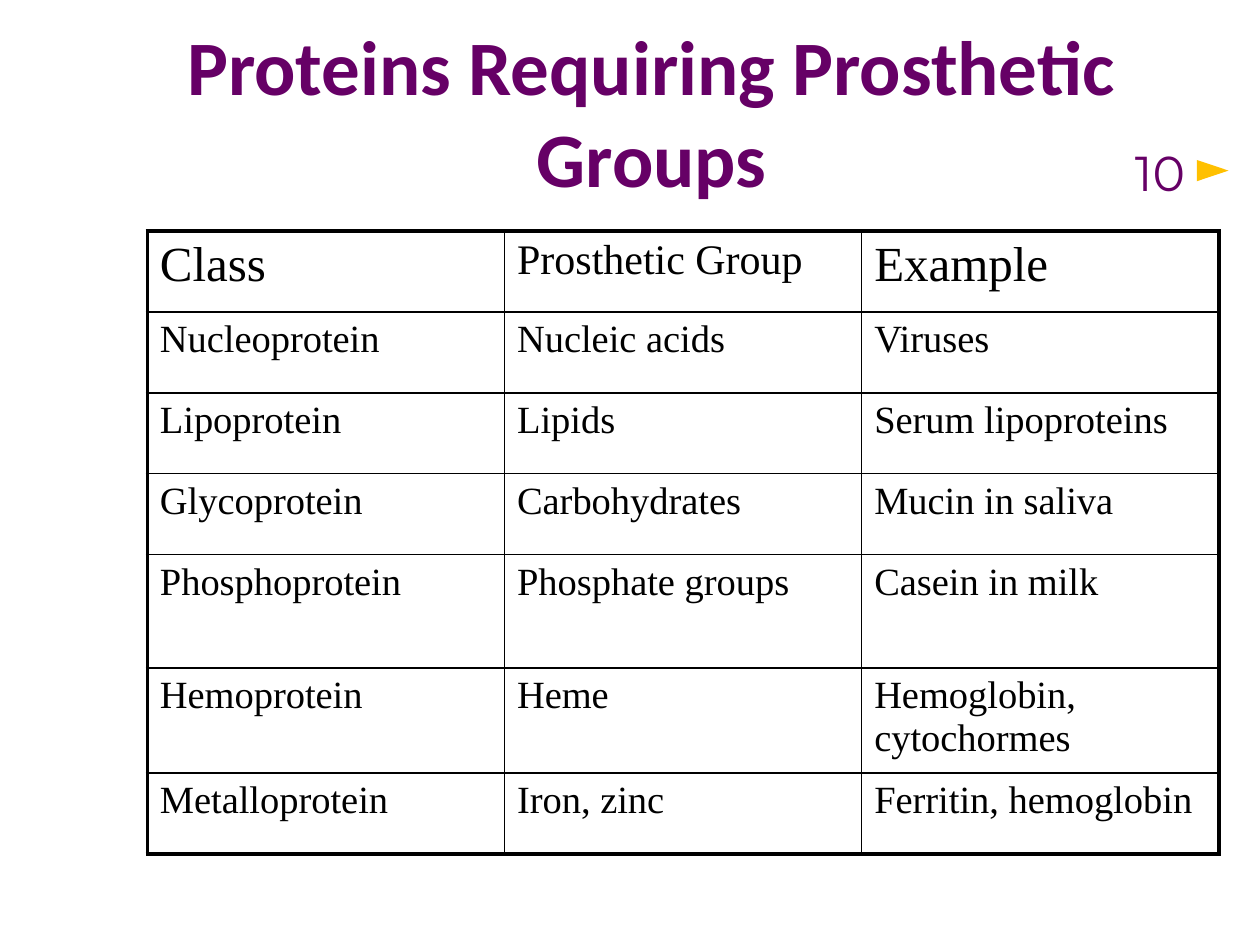
import dataclasses

import pptx
import pptx.dml.color
import pptx.enum.shapes
import pptx.enum.text
import pptx.oxml
import pptx.oxml.ns
import pptx.util

Cm = pptx.util.Cm
Pt = pptx.util.Pt
Rgb = pptx.dml.color.RGBColor.from_string
Align = pptx.enum.text.PP_ALIGN
Anchor = pptx.enum.text.MSO_ANCHOR


@dataclasses.dataclass(frozen=True)
class Theme:
    plum: str = "660066"
    gold: str = "FFC000"
    ink: str = "000000"
    title: int = 44
    head: int = 28
    group: int = 24
    body: int = 22
    thick: float = 2.25
    thin: float = 1


THEME = Theme()

ROWS = [
    ("Class", "Prosthetic Group", "Example"),
    ("Nucleoprotein", "Nucleic acids", "Viruses"),
    ("Lipoprotein", "Lipids", "Serum lipoproteins"),
    ("Glycoprotein", "Carbohydrates", "Mucin in saliva"),
    ("Phosphoprotein", "Phosphate groups", "Casein in milk"),
    ("Hemoprotein", "Heme", "Hemoglobin, cytochormes"),
    ("Metalloprotein", "Iron, zinc", "Ferritin, hemoglobin"),
]
HEIGHTS = [1.63, 1.63, 1.63, 1.63, 2.29, 2.11, 1.63]
WIDTH = 7.2


def write(frame, text, color, align, **form):
    para = frame.paragraphs[0]
    para.alignment = align
    run = para.add_run()
    run.text = text
    run.font.color.rgb = Rgb(color)
    for name, value in form.items():
        setattr(run.font, name, value)


def add_text(slide, box, text, **form):
    frame = slide.shapes.add_textbox(*map(Cm, box)).text_frame
    frame.word_wrap = True
    frame.vertical_anchor = Anchor.MIDDLE
    write(frame, text, THEME.plum, Align.CENTER, **form)


def add_edges(cell, edges):
    """Draw cell borders from (side, points) pairs given in schema order."""
    props = cell._tc.get_or_add_tcPr()
    for spot, (side, width) in enumerate(edges):
        line = pptx.oxml.parse_xml(
            f'<a:ln{side} {pptx.oxml.ns.nsdecls("a")} w="{int(Pt(width))}">'
            f'<a:solidFill><a:srgbClr val="{THEME.ink}"/></a:solidFill>'
            f'</a:ln{side}>')
        props.insert(spot, line)


def add_grid(slide, left, top):
    rows, cols = len(ROWS), len(ROWS[0])
    grid = slide.shapes.add_table(
        rows, cols, Cm(left), Cm(top), Cm(WIDTH * cols), Cm(sum(HEIGHTS))).table
    grid.first_row = grid.horz_banding = False
    for col in grid.columns:
        col.width = Cm(WIDTH)
    for r, (texts, height) in enumerate(zip(ROWS, HEIGHTS)):
        grid.rows[r].height = Cm(height)
        for c, text in enumerate(texts):
            cell = grid.cell(r, c)
            cell.fill.background()
            size = THEME.body if r else THEME.group if c == 1 else THEME.head
            write(cell.text_frame, text, THEME.ink, Align.LEFT,
                  name="Times New Roman", size=Pt(size), bold=False)
            outer = {"L": c == 0, "R": c == cols - 1,
                     "T": r == 0, "B": r == rows - 1}
            add_edges(cell, [(side, THEME.thick if rim else THEME.thin)
                             for side, rim in outer.items()])


def add_arrow(slide, box):
    kind = pptx.enum.shapes.MSO_SHAPE.ISOSCELES_TRIANGLE
    arrow = slide.shapes.add_shape(kind, *map(Cm, box))
    arrow.rotation = 90
    arrow.shadow.inherit = False
    arrow.fill.solid()
    arrow.fill.fore_color.rgb = Rgb(THEME.gold)
    arrow.line.fill.background()


def main():
    deck = pptx.Presentation()
    deck.slide_width, deck.slide_height = Cm(25.4), Cm(19.05)
    slide = deck.slides.add_slide(deck.slide_layouts[6])
    add_text(slide, (2.34, 0.64, 21.59, 3.18),
             "Proteins Requiring Prosthetic Groups",
             name="Calibri", size=Pt(THEME.title), bold=True)
    add_grid(slide, 2.97, 4.66)
    add_text(slide, (22.43, 2.74, 1.91, 1.45), "10",
             name="Montserrat", size=Pt(THEME.head))
    add_arrow(slide, (24.23, 3.12, 0.43, 0.64))
    deck.save("out.pptx")


if __name__ == "__main__":
    main()
